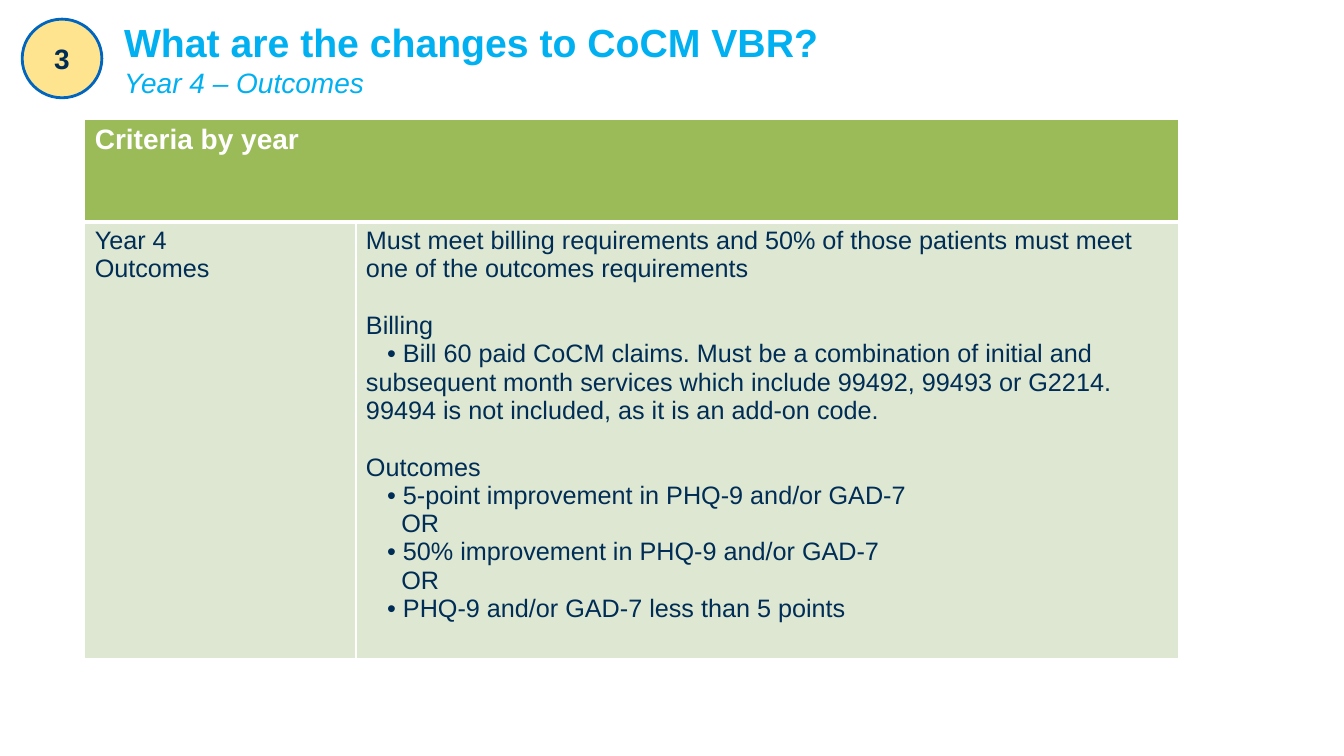
"""Build the slide on the Year 4 outcome criteria for CoCM VBR."""
import pptx
import pptx.dml.color
import pptx.enum.shapes
import pptx.enum.text
import pptx.oxml
import pptx.oxml.ns
import pptx.util

Inches, Pt = pptx.util.Inches, pptx.util.Pt

COLORS = {
    "title": "00B0F0", "text": "002D55", "white": "FFFFFF",
    "header": "9BBB59", "body": "DEE7D1",
    "badge": "FFE48F", "badge_line": "0065BF",
}
FONT = "Arial"
SECTION_GAP = 20.5
BULLET_INDENT, OR_INDENT = 0.21, 0.35

TITLE = [
    ("What are the changes to CoCM VBR?", {"size": 28, "bold": True}),
    ("Year 4 – Outcomes", {"size": 20, "italic": True}),
]
BADGE = "3"
HEADER = "Criteria by year"
YEAR = [("Year 4", 0, 0), ("Outcomes", 0, 0)]
CRITERIA = [
    ("Must meet billing requirements and 50% of those patients must meet "
     "one of the outcomes requirements", 0, 0),
    ("Billing", 0, SECTION_GAP),
    ("• Bill 60 paid CoCM claims. Must be a combination of initial and "
     "subsequent month services which include 99492, 99493 or G2214. "
     "99494 is not included, as it is an add-on code.", BULLET_INDENT, 0),
    ("Outcomes", 0, SECTION_GAP),
    ("• 5-point improvement in PHQ-9 and/or GAD-7", BULLET_INDENT, 0),
    ("OR", OR_INDENT, 0),
    ("• 50% improvement in PHQ-9 and/or GAD-7", BULLET_INDENT, 0),
    ("OR", OR_INDENT, 0),
    ("• PHQ-9 and/or GAD-7 less than 5 points", BULLET_INDENT, 0),
]
SLIDE_SIZE = (13.33, 7.5)
TITLE_BOX = (1.13, 0.33, 12.1, 0.51)
BADGE_BOX = (0.22, 0.19, 0.79, 0.78)
TABLE_ORIGIN = (0.84, 1.18)
COLUMNS = (2.69, 8.16)
ROWS = (1.02, 4.33)


def rgb(name):
    return pptx.dml.color.RGBColor.from_string(COLORS[name])


def inches(lengths):
    return [Inches(length) for length in lengths]


def add_run(paragraph, text, color, size, bold=False, italic=False):
    run = paragraph.add_run()
    run.text = text
    run.font.name, run.font.size = FONT, Pt(size)
    run.font.bold, run.font.italic = bold, italic
    run.font.color.rgb = rgb(color)


def add_title(slide):
    title = slide.shapes.title
    title.left, title.top, title.width, title.height = inches(TITLE_BOX)
    frame = title.text_frame
    frame.auto_size = pptx.enum.text.MSO_AUTO_SIZE.NONE
    frame.vertical_anchor = pptx.enum.text.MSO_ANCHOR.MIDDLE
    paragraph = frame.paragraphs[0]
    paragraph.alignment = pptx.enum.text.PP_ALIGN.LEFT
    for index, (text, style) in enumerate(TITLE):
        if index:
            paragraph.add_line_break()
        add_run(paragraph, text, "title", **style)


def style_cell(cell, fill, bottom_width):
    properties = cell._tc.get_or_add_tcPr()
    for side, width in (("L", 1), ("R", 1), ("T", 1), ("B", bottom_width)):
        properties.append(pptx.oxml.parse_xml(
            f'<a:ln{side} {pptx.oxml.ns.nsdecls("a")} w="{Pt(width)}"><a:solidFill>'
            f'<a:srgbClr val="{COLORS["white"]}"/></a:solidFill></a:ln{side}>'))
    cell.fill.solid()
    cell.fill.fore_color.rgb = rgb(fill)


def fill_cell(cell, lines):
    frame = cell.text_frame
    for index, (text, indent, gap) in enumerate(lines):
        paragraph = frame.add_paragraph() if index else frame.paragraphs[0]
        paragraph.space_before = Pt(gap)
        properties = paragraph._p.get_or_add_pPr()
        properties.set("marL", "0")
        properties.set("indent", str(Inches(indent)))
        add_run(paragraph, text, "text", 18)


def add_table(slide):
    size = inches((sum(COLUMNS), sum(ROWS)))
    table = slide.shapes.add_table(
        len(ROWS), len(COLUMNS), *inches(TABLE_ORIGIN), *size).table
    for column, width in zip(table.columns, COLUMNS):
        column.width = Inches(width)
    for row, height, fill, bottom in zip(table.rows, ROWS, ("header", "body"), (3, 1)):
        row.height = Inches(height)
        for cell in row.cells:
            style_cell(cell, fill, bottom)
    table.cell(0, 0).merge(table.cell(0, 1))
    add_run(table.cell(0, 0).text_frame.paragraphs[0], HEADER, "white", 20, bold=True)
    for column, lines in enumerate((YEAR, CRITERIA)):
        fill_cell(table.cell(1, column), lines)


def add_badge(slide):
    badge = slide.shapes.add_shape(
        pptx.enum.shapes.MSO_SHAPE.OVAL, *inches(BADGE_BOX))
    badge.shadow.inherit = False
    badge.fill.solid()
    badge.fill.fore_color.rgb = rgb("badge")
    badge.line.color.rgb = rgb("badge_line")
    badge.line.width = Pt(2)
    frame = badge.text_frame
    frame.margin_left = frame.margin_right = frame.margin_top = frame.margin_bottom = 0
    frame.vertical_anchor = pptx.enum.text.MSO_ANCHOR.MIDDLE
    paragraph = frame.paragraphs[0]
    paragraph.alignment = pptx.enum.text.PP_ALIGN.CENTER
    add_run(paragraph, BADGE, "text", 20, bold=True)


def main():
    presentation = pptx.Presentation()
    presentation.slide_width, presentation.slide_height = inches(SLIDE_SIZE)
    slide = presentation.slides.add_slide(presentation.slide_layouts[5])
    add_title(slide)
    add_table(slide)
    add_badge(slide)
    presentation.save("out.pptx")


if __name__ == "__main__":
    main()
